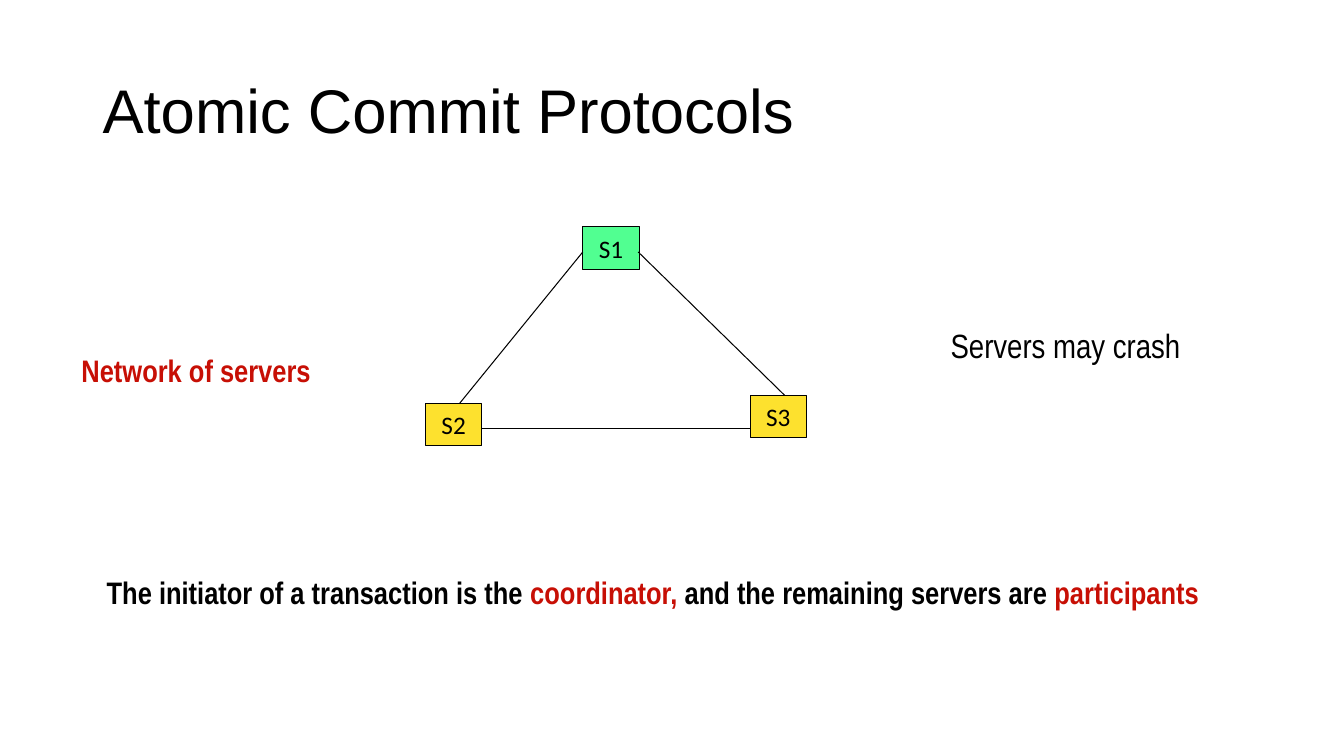
"""Build the slide on atomic commit protocols with its triangle of servers."""
from dataclasses import dataclass

from lxml import etree
from pptx import Presentation
from pptx.dml.color import RGBColor
from pptx.enum.shapes import MSO_CONNECTOR, MSO_SHAPE
from pptx.enum.text import MSO_ANCHOR, PP_ALIGN
from pptx.oxml.ns import qn
from pptx.util import Emu, Pt

RECTANGLE = MSO_SHAPE.RECTANGLE
STRAIGHT = MSO_CONNECTOR.STRAIGHT
LEFT, CENTER = PP_ALIGN.LEFT, PP_ALIGN.CENTER
MIDDLE = MSO_ANCHOR.MIDDLE
EMU_PER_PX = 9144


@dataclass(frozen=True)
class Theme:
    black: str = "000000"
    red: str = "C70F05"
    green: str = "51FF91"
    yellow: str = "FDE12E"
    title_font: str = "Arial"
    body_font: str = "Arial Narrow"
    server_font: str = "Calibri"
    title_size: float = 44
    note_size: float = 24
    body_size: float = 22.2
    server_size: float = 18
    line_width: float = 0.75


def px(*lengths):
    return [Emu(length * EMU_PER_PX) for length in lengths]


def write(frame, spans, *, font, size, bold=False, align=LEFT, spacing=1.0, wrap=True):
    frame.word_wrap = wrap
    frame.vertical_anchor = MIDDLE
    para = frame.paragraphs[0]
    para.alignment = align
    para.line_spacing = spacing
    for text, color in spans:
        span = para.add_run()
        span.text = text
        span.font.name = font
        span.font.size = Pt(size)
        span.font.bold = bold
        span.font.color.rgb = RGBColor.from_string(color)


class SlideBuilder:
    def __init__(self, page, theme):
        self.page = page
        self.theme = theme

    def outline(self, line):
        line.color.rgb = RGBColor.from_string(self.theme.black)
        line.width = Pt(self.theme.line_width)

    def text(self, bounds, spans, **style):
        box = self.page.shapes.add_textbox(*px(*bounds))
        write(box.text_frame, spans, **style)

    def server(self, name, left, top, color):
        box = self.page.shapes.add_shape(RECTANGLE, *px(left, top, 56, 42))
        box.shadow.inherit = False
        box.fill.solid()
        box.fill.fore_color.rgb = RGBColor.from_string(color)
        self.outline(box.line)
        write(box.text_frame, [(name, self.theme.black)], font=self.theme.server_font,
              size=self.theme.server_size, align=CENTER, wrap=False)

    def link(self, start, end):
        connector = self.page.shapes.add_connector(STRAIGHT, *px(*start, *end))
        self.outline(connector.line)
        etree.SubElement(connector._element.spPr, qn("a:effectLst"))


def main():
    deck = Presentation()
    deck.slide_width, deck.slide_height = px(1333, 750)
    theme = Theme()
    slide = SlideBuilder(deck.slides.add_slide(deck.slide_layouts[6]), theme)
    emphasis = {"font": theme.body_font, "size": theme.body_size, "bold": True}

    slide.text((92, 40, 1150, 145), [("Atomic Commit Protocols", theme.black)],
               font=theme.title_font, size=theme.title_size, spacing=0.9)
    slide.text((71, 342, 300, 50), [("Network of servers", theme.red)], **emphasis)
    slide.text((96, 562, 1125, 50), [
        ("The initiator of a transaction is the", theme.black),
        (" coordinator, ", theme.red),
        ("and the remaining servers are", theme.black),
        (" participants", theme.red),
    ], **emphasis)

    for name, left, top, color in (
        ("S1", 578, 225, theme.green),
        ("S3", 744, 392, theme.yellow),
        ("S2", 422, 400, theme.yellow),
    ):
        slide.server(name, left, top, color)
    for start, end in (
        ((478, 425), (744, 425)),
        ((578, 250), (456, 400)),
        ((633, 250), (778, 392)),
    ):
        slide.link(start, end)

    slide.text((933, 317, 250, 50), [("Servers may crash", theme.black)],
               font=theme.body_font, size=theme.note_size, wrap=False)
    deck.save("out.pptx")


if __name__ == "__main__":
    main()
